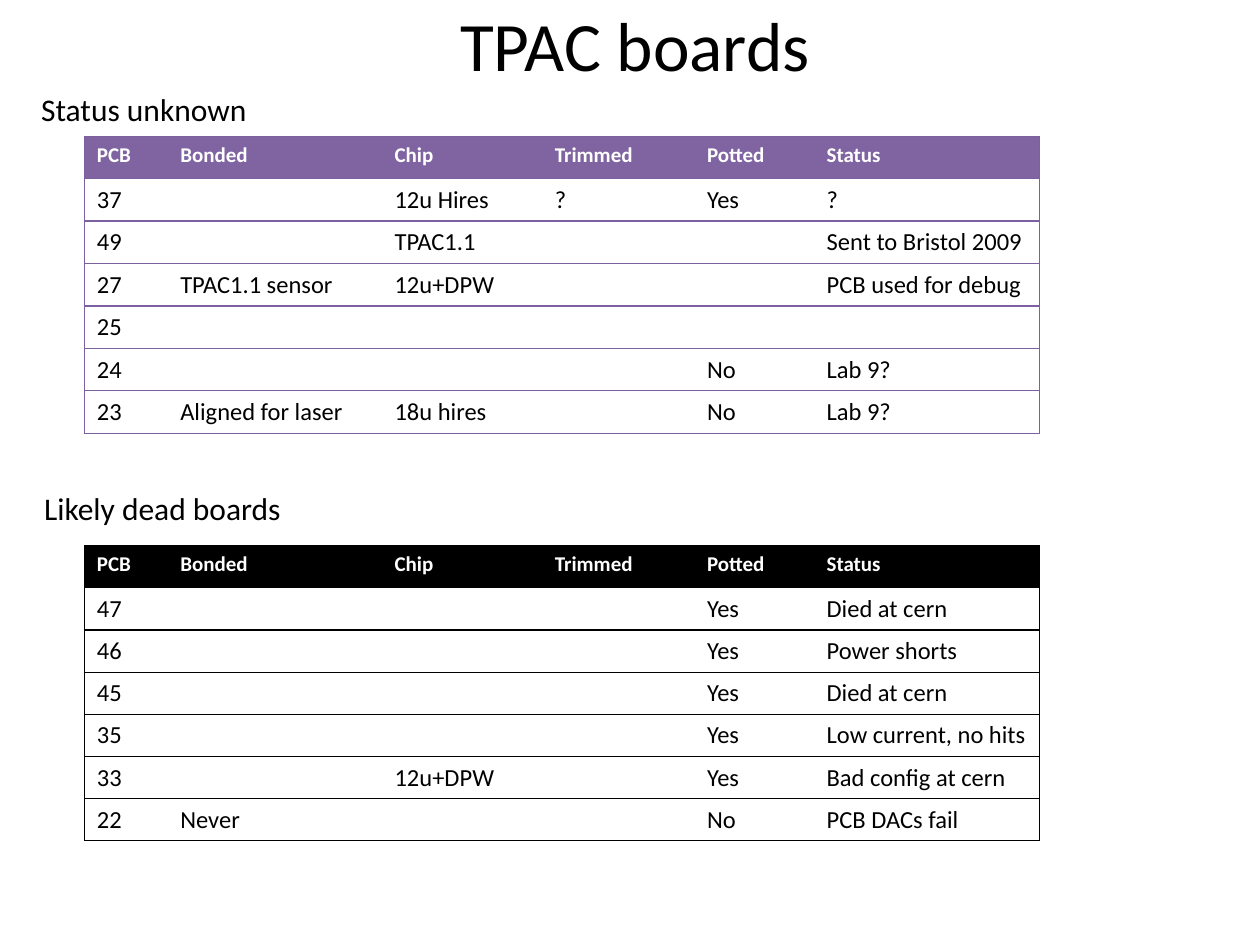
from lxml import etree
from pptx import Presentation
from pptx.dml.color import RGBColor
from pptx.enum.text import MSO_ANCHOR, PP_ALIGN
from pptx.oxml.ns import qn
from pptx.util import Cm, Pt

CENTER = PP_ALIGN.CENTER
MIDDLE = MSO_ANCHOR.MIDDLE
TITLE_ONLY = 5
FONT = "Calibri"
COLORS = {
    "text": "000000",
    "header_text": "FFFFFF",
    "purple": "8064A2",
    "purple_line": "7D60A0",
    "black": "000000",
}

HEADERS = ["PCB", "Bonded", "Chip", "Trimmed", "Potted", "Status"]
COLUMN_WIDTHS = [1.68, 4.32, 3.23, 3.07, 2.41, 4.55]
ROW_HEIGHT = 0.85
UNKNOWN_BOARDS = [
    ["37", "", "12u Hires", "?", "Yes", "?"],
    ["49", "", "TPAC1.1", "", "", "Sent to Bristol 2009"],
    ["27", "TPAC1.1 sensor", "12u+DPW", "", "", "PCB used for debug"],
    ["25", "", "", "", "", ""],
    ["24", "", "", "", "No", "Lab 9?"],
    ["23", "Aligned for laser", "18u hires", "", "No", "Lab 9?"],
]
DEAD_BOARDS = [
    ["47", "", "", "", "Yes", "Died at cern"],
    ["46", "", "", "", "Yes", "Power shorts"],
    ["45", "", "", "", "Yes", "Died at cern"],
    ["35", "", "", "", "Yes", "Low current, no hits"],
    ["33", "", "12u+DPW", "", "Yes", "Bad config at cern"],
    ["22", "Never", "", "", "No", "PCB DACs fail"],
]


def write_text(text_frame, text, size, color="text", bold=False, align=None):
    paragraph = text_frame.paragraphs[0]
    paragraph.alignment = align
    if not text:
        # An empty cell keeps the row height of its text size
        etree.SubElement(paragraph._p, qn("a:endParaRPr"), sz=str(int(size * 100)))
        return
    run = paragraph.add_run()
    run.text = text
    run.font.name = FONT
    run.font.size = Pt(size)
    run.font.bold = bold
    run.font.color.rgb = RGBColor.from_string(COLORS[color])


def set_borders(cell, color, sides):
    """Draw the given sides of a cell and clear the others."""
    properties = cell._tc.get_or_add_tcPr()
    for side in "LRTB":
        line = etree.SubElement(properties, qn(f"a:ln{side}"), w=str(Pt(0.75)))
        if side in sides:
            fill = etree.SubElement(line, qn("a:solidFill"))
            etree.SubElement(fill, qn("a:srgbClr"), val=COLORS[color])
        else:
            etree.SubElement(line, qn("a:noFill"))


def add_title(slide, left, top, width, height):
    title = slide.shapes.title
    title.left, title.top, title.width, title.height = map(Cm, (left, top, width, height))
    title.text_frame.vertical_anchor = MIDDLE
    write_text(title.text_frame, "TPAC boards", 39.6, align=CENTER)


def add_heading(slide, text, left, top, width, height=1.02):
    box = slide.shapes.add_textbox(Cm(left), Cm(top), Cm(width), Cm(height))
    box.text_frame.word_wrap = False
    write_text(box.text_frame, text, 18)


def add_board_table(slide, boards, left, top, header_color, line_color):
    rows = [HEADERS] + boards
    frame = slide.shapes.add_table(
        len(rows), len(HEADERS), Cm(left), Cm(top),
        Cm(sum(COLUMN_WIDTHS)), Cm(ROW_HEIGHT * len(rows)))
    table = frame.table
    table.horz_banding = False
    for column, width in zip(table.columns, COLUMN_WIDTHS):
        column.width = Cm(width)

    last_column = len(HEADERS) - 1
    for row_index, values in enumerate(rows):
        table.rows[row_index].height = Cm(ROW_HEIGHT)
        is_header = row_index == 0
        for column_index, value in enumerate(values):
            cell = table.cell(row_index, column_index)
            outer_sides = {0: "L", last_column: "R"}.get(column_index, "")
            set_borders(cell, line_color, "TB" + outer_sides)
            if is_header:
                cell.fill.solid()
                cell.fill.fore_color.rgb = RGBColor.from_string(COLORS[header_color])
                write_text(cell.text_frame, value, 12, color="header_text", bold=True)
            else:
                cell.fill.background()
                write_text(cell.text_frame, value, 14)


def main():
    presentation = Presentation()
    presentation.slide_width, presentation.slide_height = Cm(25.4), Cm(19.05)
    slide = presentation.slides.add_slide(presentation.slide_layouts[TITLE_ONLY])

    add_title(slide, 1.27, 0, 23.06, 1.78)

    # Boards of unknown status
    add_board_table(slide, UNKNOWN_BOARDS, 1.7, 2.75, "purple", "purple_line")
    add_heading(slide, "Status unknown", 0.58, 1.7, 4.7)

    # Boards that are likely dead
    add_board_table(slide, DEAD_BOARDS, 1.7, 11, "black", "black")
    add_heading(slide, "Likely dead boards", 0.64, 9.73, 5.33)

    presentation.save("out.pptx")


if __name__ == "__main__":
    main()
